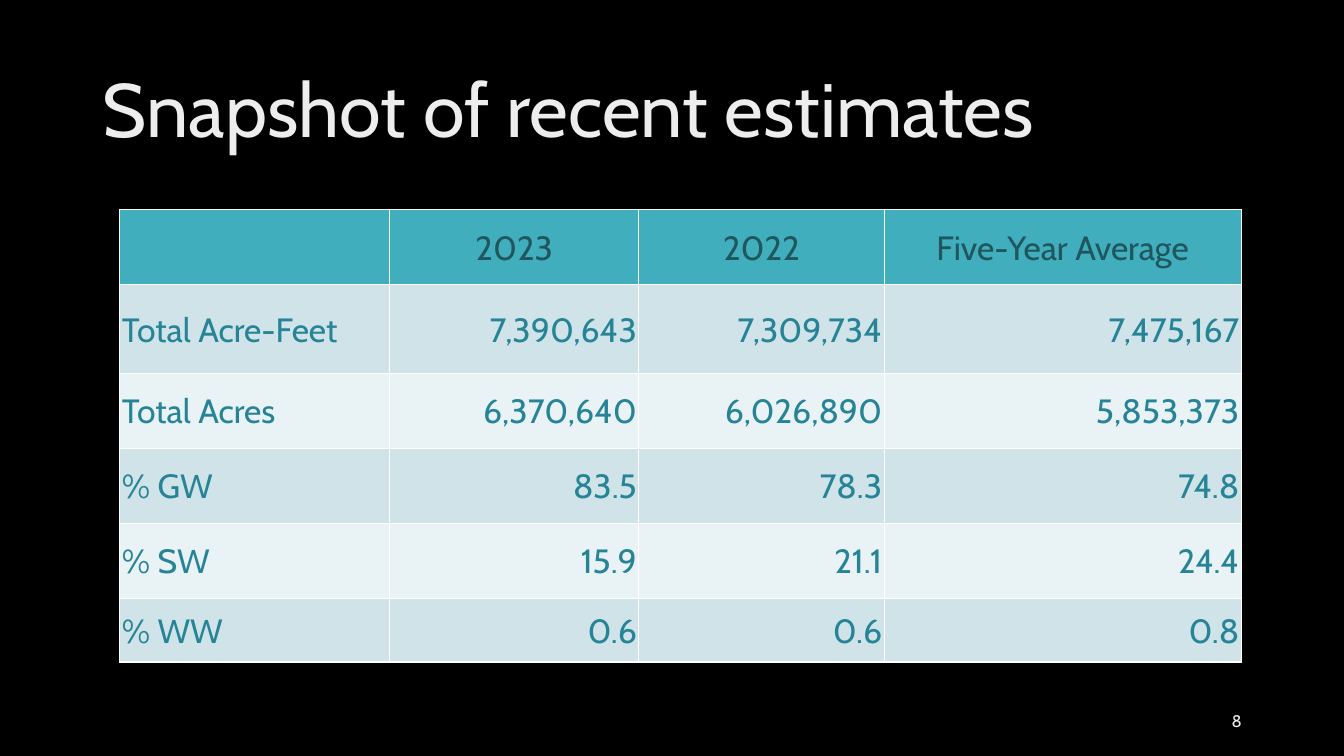
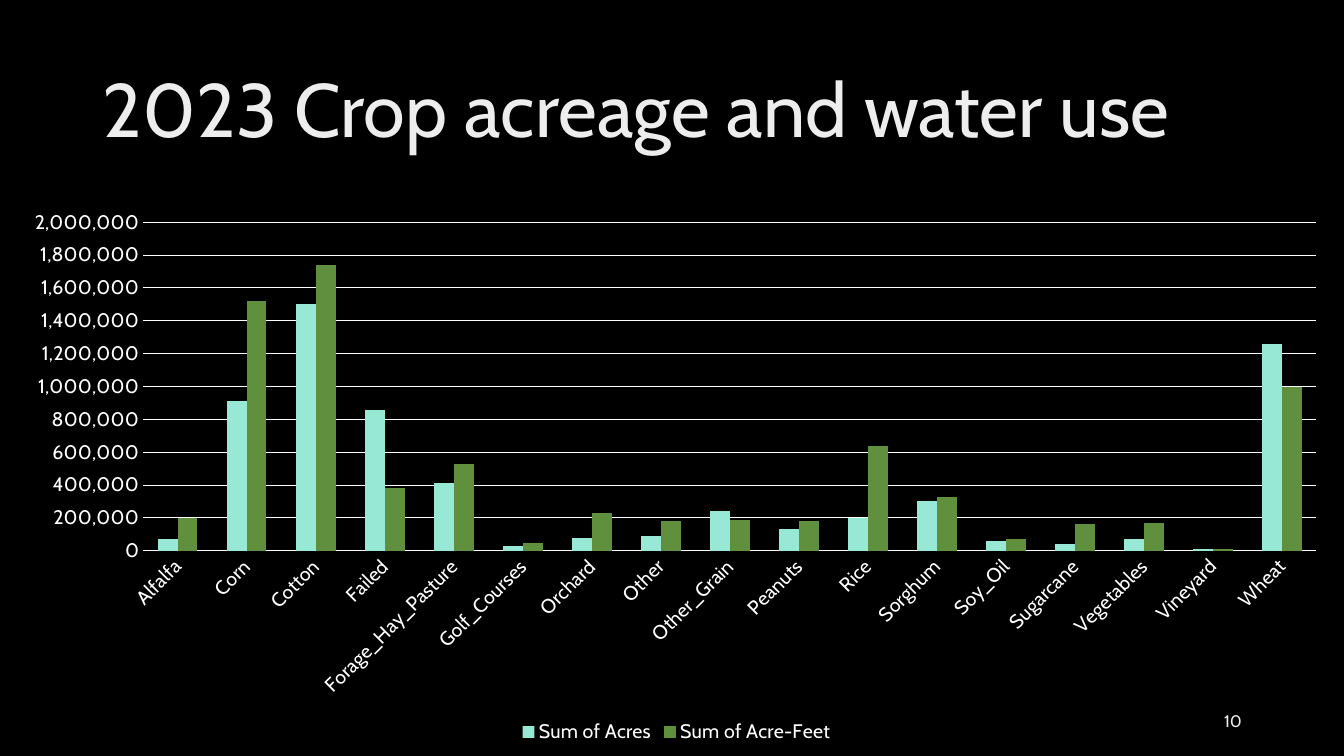
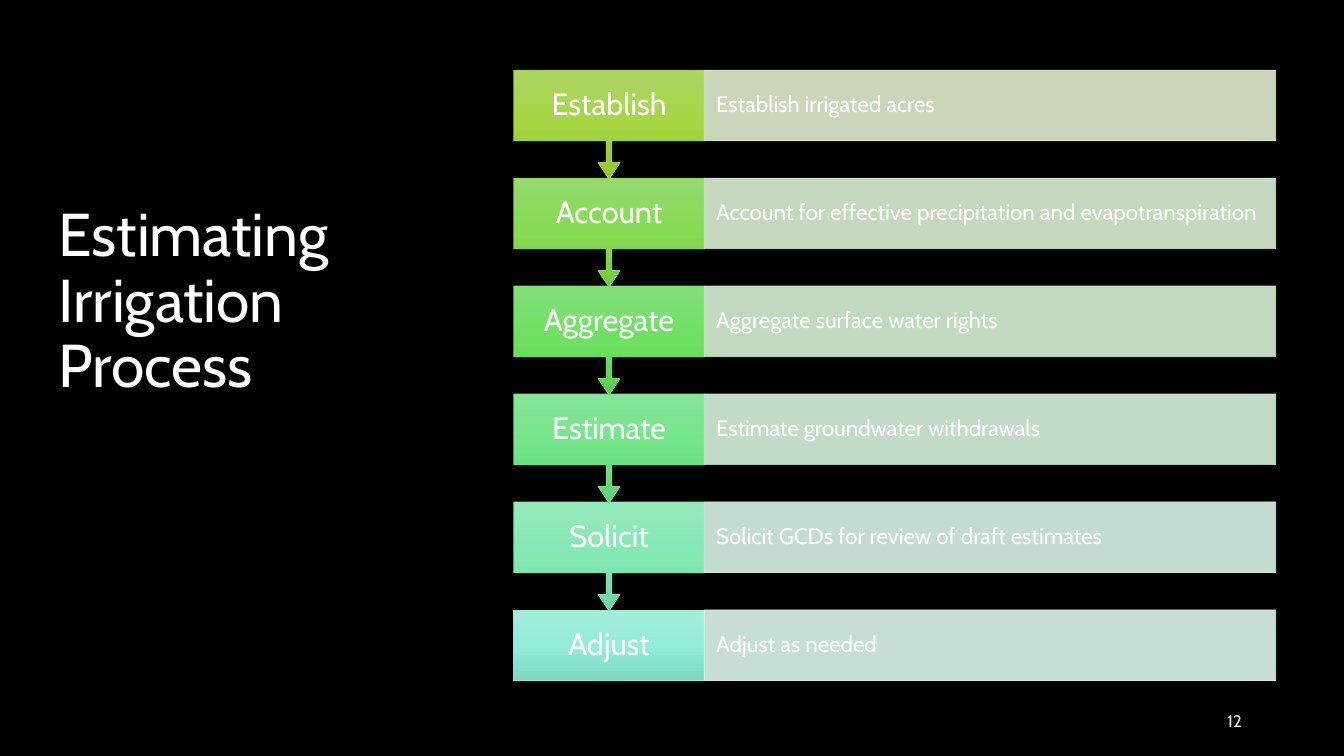
"""Build three slides on irrigation estimates: a table, a column chart and a process."""
from copy import deepcopy
from lxml import etree
from pptx import Presentation
from pptx.chart.data import CategoryChartData
from pptx.dml.color import RGBColor
from pptx.enum.chart import XL_CHART_TYPE, XL_LEGEND_POSITION, XL_TICK_MARK
from pptx.enum.shapes import MSO_SHAPE
from pptx.enum.text import MSO_ANCHOR, MSO_AUTO_SIZE, PP_ALIGN
from pptx.oxml import parse_xml
from pptx.oxml.ns import nsdecls, qn
from pptx.util import Cm, Pt

FONT = "Cabin"
BLACK, WHITE, SOFT_WHITE = "000000", "FFFFFF", "EDEDED"
HEADER_FILL, HEADER_TEXT, BODY_TEXT = "41AEBD", "20575E", "268496"
BANDS = ("CFE3E8", "E9F2F4")
LEFT, CENTER, RIGHT = PP_ALIGN.LEFT, PP_ALIGN.CENTER, PP_ALIGN.RIGHT

ESTIMATES = [
    ("", "2023", "2022", "Five-Year Average"),
    ("Total Acre-Feet", "7,390,643", "7,309,734", "7,475,167"),
    ("Total Acres", "6,370,640", "6,026,890", "5,853,373"),
    ("% GW", "83.5", "78.3", "74.8"),
    ("% SW", "15.9", "21.1", "24.4"),
    ("% WW", "0.6", "0.6", "0.8"),
]
COL_WIDTHS = (6.8, 6.28, 6.18, 9)
ROW_HEIGHTS = (1.89, 2.24, 1.89, 1.89, 1.89, 1.6)

CROPS = [
    ("Alfalfa", 70000, 200000),
    ("Corn", 910000, 1520000),
    ("Cotton", 1500000, 1740000),
    ("Failed", 860000, 380000),
    ("Forage_Hay_Pasture", 410000, 530000),
    ("Golf_Courses", 30000, 50000),
    ("Orchard", 80000, 230000),
    ("Other", 90000, 180000),
    ("Other_Grain", 240000, 190000),
    ("Peanuts", 130000, 180000),
    ("Rice", 200000, 640000),
    ("Sorghum", 300000, 330000),
    ("Soy_Oil", 60000, 70000),
    ("Sugarcane", 40000, 160000),
    ("Vegetables", 70000, 170000),
    ("Vineyard", 10000, 10000),
    ("Wheat", 1260000, 1000000),
]
SERIES = [("Sum of Acres", "97E9D5"), ("Sum of Acre-Feet", "608F3D")]
PLOT_LAYOUT = {"x": 0.1, "y": 0.04, "w": 0.88, "h": 0.6}

STEPS = [
    ("Establish", "Establish irrigated acres",
     ("ACD564", "A4D642", "94C533"), "A2CF49", "E0EDCF"),
    ("Account", "Account for effective precipitation and evapotranspiration",
     ("95DA6F", "86DB52", "75CA42"), "87D558", "DBEFD2"),
    ("Aggregate", "Aggregate surface water rights",
     ("84DF7B", "6EE062", "5CCE50"), "72DA67", "D6F1D4"),
    ("Estimate", "Estimate groundwater withdrawals",
     ("88E498", "72E587", "5FD274"), "77DF8B", "D7F3DD"),
    ("Solicit", "Solicit GCDs for review of draft estimates",
     ("96E9BC", "82E9B3", "6ED59E"), "87E4B3", "DAF5E7"),
    ("Adjust", "Adjust as needed",
     ("A4EDDB", "93EDD7", "7DD8C2"), "97E9D5", "DDF7EF"),
]
STEP_TOP, STEP_PITCH, BOX_H, CALLOUT_H = 1.77, 2.72, 1.78, 2.74
STEP_LEFT, STEP_W, DETAIL_W = 12.95, 4.8, 14.4
CALLOUT_ADJ = (0.05, 0.1, 0.15, 0.65)


def rgb(color):
    """Turn a hex string into a colour."""
    return RGBColor.from_string(color)


def box(left, top, width, height):
    """Convert a place in centimetres."""
    return Cm(left), Cm(top), Cm(width), Cm(height)


def set_font(font, size, color):
    """Apply the shared typeface with a size and colour."""
    font.name, font.size, font.bold = FONT, Pt(size), False
    font.color.rgb = rgb(color)


def put_text(tf, text, size=12, color=WHITE, align=LEFT, anchor=None,
             spacing=None, margins=None):
    """Write one formatted paragraph into a text frame."""
    tf.word_wrap = True
    if anchor is not None:
        tf.auto_size = MSO_AUTO_SIZE.NONE
        tf.vertical_anchor = anchor
    if margins:
        tf.margin_left = tf.margin_right = Cm(margins[0])
        tf.margin_top = tf.margin_bottom = Cm(margins[1])
    p = tf.paragraphs[0]
    p.alignment = align
    if spacing:
        p.line_spacing = spacing
    r = p.add_run()
    r.text = text
    set_font(r.font, size, color)


def add_slide(prs, title, number, place=(2.34, 1.02, 29.21, 3.68), size=54,
              color=SOFT_WHITE, anchor=MSO_ANCHOR.MIDDLE):
    """Add a slide with its title and page number."""
    slide = prs.slides.add_slide(prs.slide_layouts[5])
    sp = slide.shapes.title
    sp.left, sp.top, sp.width, sp.height = box(*place)
    put_text(sp.text_frame, title, size=size, color=color, anchor=anchor, spacing=0.9)
    sp = slide.shapes.add_textbox(*box(23.93, 17.65, 7.62, 1.02))
    put_text(sp.text_frame, number, color=SOFT_WHITE, align=RIGHT, anchor=MSO_ANCHOR.MIDDLE)
    return slide


def set_borders(cell, color, width):
    """Draw all four borders of a table cell."""
    tc_pr = cell._tc.get_or_add_tcPr()
    for i, side in enumerate("LRTB"):
        tc_pr.insert(i, parse_xml(
            f'<a:ln{side} {nsdecls("a")} w="{Pt(width)}"><a:solidFill>'
            f'<a:srgbClr val="{color}"/></a:solidFill></a:ln{side}>'))


def add_estimates(slide):
    """Add the table of recent estimates."""
    frame = slide.shapes.add_table(
        len(ROW_HEIGHTS), len(COL_WIDTHS),
        *box(3.02, 5.28, sum(COL_WIDTHS), sum(ROW_HEIGHTS)))
    table = frame.table
    table.first_row = table.horz_banding = False
    for col, width in zip(table.columns, COL_WIDTHS):
        col.width = Cm(width)
    for i, (row, height, values) in enumerate(zip(table.rows, ROW_HEIGHTS, ESTIMATES)):
        row.height = Cm(height)
        for j, (cell, value) in enumerate(zip(row.cells, values)):
            cell.fill.solid()
            cell.fill.fore_color.rgb = rgb(BANDS[(i - 1) % 2] if i else HEADER_FILL)
            cell.vertical_anchor = MSO_ANCHOR.MIDDLE
            cell.margin_left = cell.margin_right = cell.margin_top = Cm(0.05)
            cell.margin_bottom = 0
            set_borders(cell, WHITE, 1)
            if value:
                body_align = RIGHT if j else LEFT
                put_text(cell.text_frame, value, size=24,
                         color=BODY_TEXT if i else HEADER_TEXT,
                         align=body_align if i else CENTER)


def set_plot_layout(chart):
    """Fix the inner plot area as shares of the chart."""
    plot_area = chart._chartSpace.chart.plotArea
    for old in plot_area.findall(qn("c:layout")):
        plot_area.remove(old)
    layout = etree.Element(qn("c:layout"))
    manual = etree.SubElement(layout, qn("c:manualLayout"))
    settings = {"layoutTarget": "inner", "xMode": "edge", "yMode": "edge", **PLOT_LAYOUT}
    for name, value in settings.items():
        etree.SubElement(manual, qn(f"c:{name}")).set("val", str(value))
    plot_area.insert(0, layout)


def add_crop_chart(slide):
    """Add the clustered columns of acreage and water use."""
    names, *columns = zip(*CROPS)
    data = CategoryChartData(number_format="#,##0")
    data.categories = names
    for (name, _), values in zip(SERIES, columns):
        data.add_series(name, values)
    chart = slide.shapes.add_chart(
        XL_CHART_TYPE.COLUMN_CLUSTERED, *box(0.25, 5.05, 33.6, 13.8), data).chart
    set_font(chart.font, 10, WHITE)
    chart.has_title = False
    chart.has_legend = True
    chart.legend.position = XL_LEGEND_POSITION.BOTTOM
    chart.legend.include_in_layout = False
    set_font(chart.legend.font, 14, WHITE)
    plot = chart.plots[0]
    plot.gap_width, plot.overlap, plot.vary_by_categories = 150, 0, False
    for series, (_, color) in zip(plot.series, SERIES):
        series.format.fill.solid()
        series.format.fill.fore_color.rgb = rgb(color)
    for axis in (chart.category_axis, chart.value_axis):
        axis.major_tick_mark = axis.minor_tick_mark = XL_TICK_MARK.NONE
        axis.format.line.fill.background()
        set_font(axis.tick_labels.font, 14, WHITE)
    chart.category_axis._element.txPr.find(qn("a:bodyPr")).set("rot", "-2700000")
    axis = chart.value_axis
    axis.minimum_scale, axis.maximum_scale, axis.major_unit = 0, 2000000, 200000
    axis.tick_labels.number_format = "#,##0"
    axis.tick_labels.number_format_is_linked = False
    axis.major_gridlines.format.line.color.rgb = rgb(WHITE)
    axis.major_gridlines.format.line.width = Pt(0.75)
    set_plot_layout(chart)


def add_block(slide, kind, place, line):
    """Add a shadowless shape with a thin line."""
    sp = slide.shapes.add_shape(kind, *box(*place))
    sp.shadow.inherit = False
    sp.line.color.rgb = rgb(line)
    sp.line.width = Pt(0.5)
    return sp


def fill_gradient(sp, colors):
    """Fill a shape from top to bottom with three colours."""
    sp.fill.gradient()
    sp.fill.gradient_angle = 270
    stops = sp._element.spPr.find(qn("a:gradFill")).find(qn("a:gsLst"))
    stops.insert(1, deepcopy(stops[0]))
    for stop, color, position in zip(sp.fill.gradient_stops, colors, (0, 0.5, 1)):
        stop.color.rgb = rgb(color)
        stop.position = position


def set_opacity(sp, percent):
    """Make the fill and line of a shape partly transparent."""
    for color in sp._element.spPr.iter(qn("a:srgbClr")):
        etree.SubElement(color, qn("a:alpha")).set("val", str(percent * 1000))


def add_process(slide):
    """Add the chain of steps, each with its detail bar."""
    last = len(STEPS) - 1
    for i, (name, detail, colors, line, pale) in reversed(list(enumerate(STEPS))):
        top = STEP_TOP + i * STEP_PITCH
        kind = MSO_SHAPE.RECTANGLE if i == last else MSO_SHAPE.DOWN_ARROW_CALLOUT
        height = BOX_H if i == last else CALLOUT_H
        sp = add_block(slide, kind, (STEP_LEFT, top, STEP_W, height), line)
        if i < last:
            for j, value in enumerate(CALLOUT_ADJ):
                sp.adjustments[j] = value
        fill_gradient(sp, colors)
        put_text(sp.text_frame, name, size=22, align=CENTER, spacing=0.9,
                 anchor=MSO_ANCHOR.MIDDLE, margins=(0.33, 0.43))
        sp = add_block(slide, MSO_SHAPE.RECTANGLE,
                       (STEP_LEFT + STEP_W, top, DETAIL_W, BOX_H), pale)
        sp.fill.solid()
        sp.fill.fore_color.rgb = rgb(pale)
        set_opacity(sp, 90)
        put_text(sp.text_frame, detail, size=16, spacing=0.9,
                 anchor=MSO_ANCHOR.MIDDLE, margins=(0.3, 0.56))


def main():
    """Build and save the presentation."""
    prs = Presentation()
    prs.slide_width, prs.slide_height = Cm(33.87), Cm(19.05)
    fill = prs.slide_master.background.fill
    fill.solid()
    fill.fore_color.rgb = rgb(BLACK)
    add_estimates(add_slide(prs, "Snapshot of recent estimates", "8"))
    add_crop_chart(add_slide(prs, "2023 Crop acreage and water use", "10"))
    add_process(add_slide(prs, "Estimating Irrigation Process", "12",
                          place=(1.22, 5.03, 8.86, 2.29), size=43.2,
                          color=WHITE, anchor=MSO_ANCHOR.TOP))
    prs.save("out.pptx")


if __name__ == "__main__":
    main()
